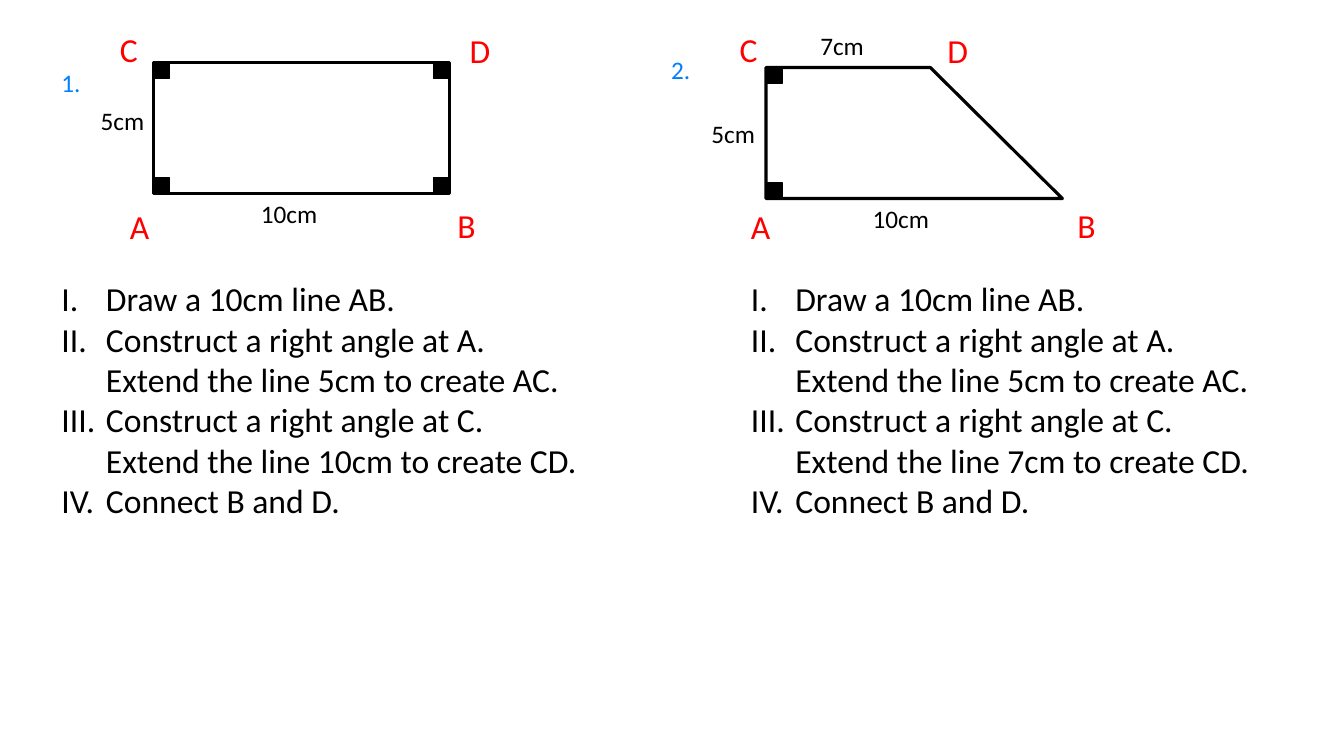
"""Build a slide comparing the construction steps of a rectangle and a trapezium."""
from dataclasses import dataclass

from lxml import etree
from pptx import Presentation
from pptx import util as u
from pptx.dml.color import RGBColor
from pptx.enum import shapes, text
from pptx.oxml.ns import qn

COLORS = {"ink": "000000", "letter": "FF0000", "number": "007FFF"}
FONT = "Calibri"
COLUMNS, ROWS = 160, 90
SLIDE_WIDTH, SLIDE_HEIGHT = u.Inches(13.33), u.Inches(7.5)
BASE, HEIGHT, CORNER = 35.28, 15.6, 1.92
LETTER_ROWS = {"A": 23.88, "B": 23.76, "C": 2.88, "D": 3}
LIST_TOP, LIST_HEIGHT = 32.52, 30.24
INDENT = u.Inches(0.44)


@dataclass(frozen=True)
class Label:
    text: str
    column: float
    row: float
    width: float
    height: float = 4.8
    size: int = 18
    color: str = "ink"


@dataclass(frozen=True)
class Construction:
    column: float
    row: float
    top_length: float
    corners: str
    labels: tuple[Label, ...]
    letter_columns: dict[str, float]
    list_column: float
    list_width: float
    top_side: str


CONSTRUCTIONS = (
    Construction(
        18.24, 7.44, BASE, "ABCD",
        (Label("1.", 6.12, 7.44, 4.8, color="number"),
         Label("5cm", 10.8, 12, 8.4),
         Label("10cm", 29.88, 23.04, 12.36)),
        {"A": 14.28, "B": 53.28, "C": 13.08, "D": 54.72},
        6.12, 64.08, "10cm"),
    Construction(
        91.2, 8.04, 19.56, "AC",
        (Label("2.", 78.72, 5.88, 4.8, color="number"),
         Label("5cm", 83.52, 13.44, 8.4),
         Label("10cm", 102.72, 23.64, 12.36),
         Label("7cm", 96.48, 3, 12.36)),
        {"A": 88.2, "B": 127.08, "C": 86.88, "D": 111.6},
        88.2, 62.88, "7cm"),
)


def across(columns: float) -> int:
    """Convert grid columns to a length."""
    return round(SLIDE_WIDTH * columns / COLUMNS)


def down(rows: float) -> int:
    """Convert grid rows to a length."""
    return round(SLIDE_HEIGHT * rows / ROWS)


def frame(column: float, row: float, width: float, height: float) -> tuple[int, int, int, int]:
    """Convert a grid rectangle to left, top, width and height."""
    return across(column), down(row), across(width), down(height)


def color(name: str) -> RGBColor:
    """Look up a named color."""
    return RGBColor.from_string(COLORS[name])


def style_runs(paragraph, size: int, color_name: str) -> None:
    """Set the font of every run in a paragraph."""
    for run in paragraph.runs:
        run.font.name = FONT
        run.font.size = u.Pt(size)
        run.font.color.rgb = color(color_name)


def style_shape(shape, line_width: float, filled: bool) -> None:
    """Give a shape a plain outline, with or without a fill."""
    shape.shadow.inherit = False
    if filled:
        shape.fill.solid()
        shape.fill.fore_color.rgb = color("ink")
    else:
        shape.fill.background()
    shape.line.color.rgb = color("ink")
    shape.line.width = u.Pt(line_width)


def add_label(slide, label: Label) -> None:
    """Add one short text label."""
    shape = slide.shapes.add_textbox(
        *frame(label.column, label.row, label.width, label.height))
    text_frame = shape.text_frame
    text_frame.word_wrap = True
    text_frame.auto_size = text.MSO_AUTO_SIZE.SHAPE_TO_FIT_TEXT
    text_frame.text = label.text
    style_runs(text_frame.paragraphs[0], label.size, label.color)


def add_figure(slide, item: Construction) -> None:
    """Draw the outline and its right-angle corners."""
    if item.top_length == BASE:
        outline = slide.shapes.add_shape(
            shapes.MSO_SHAPE.RECTANGLE, *frame(item.column, item.row, BASE, HEIGHT))
    else:
        left, top = across(item.column), down(item.row)
        bottom = top + down(HEIGHT)
        builder = slide.shapes.build_freeform(left, top)
        builder.add_line_segments(
            [(left + across(item.top_length), top),
             (left + across(BASE), bottom), (left, bottom)], close=True)
        outline = builder.convert_to_shape()
    style_shape(outline, 2.25, filled=False)
    for corner in item.corners:
        column = item.column + (BASE - CORNER if corner in "BD" else 0)
        row = item.row + (HEIGHT - CORNER if corner in "AB" else 0)
        square = slide.shapes.add_shape(
            shapes.MSO_SHAPE.RECTANGLE, *frame(column, row, CORNER, CORNER))
        style_shape(square, 1, filled=True)


def fill_steps(placeholder, item: Construction) -> None:
    """Write the numbered construction steps into a body placeholder."""
    (placeholder.left, placeholder.top, placeholder.width, placeholder.height) = frame(
        item.list_column, LIST_TOP, item.list_width, LIST_HEIGHT)
    text_frame = placeholder.text_frame
    text_frame.text = "\n".join((
        "Draw a 10cm line AB.",
        "Construct a right angle at A. Extend the line 5cm to create AC.",
        f"Construct a right angle at C. Extend the line {item.top_side} to create CD.",
        "Connect B and D.",
    ))
    text_frame.word_wrap = True
    text_frame.auto_size = text.MSO_AUTO_SIZE.SHAPE_TO_FIT_TEXT
    text_frame.vertical_anchor = text.MSO_ANCHOR.TOP
    for paragraph in text_frame.paragraphs:
        paragraph.space_before = paragraph.space_after = u.Pt(0)
        paragraph.alignment = text.PP_ALIGN.LEFT
        properties = paragraph._p.get_or_add_pPr()
        properties.set("marL", str(INDENT))
        properties.set("indent", str(-INDENT))
        etree.SubElement(properties, qn("a:buFont"), typeface="+mj-lt")
        etree.SubElement(properties, qn("a:buAutoNum"), type="romanUcPeriod")
        style_runs(paragraph, 24, "ink")


def main() -> None:
    """Create and save the presentation."""
    presentation = Presentation()
    presentation.slide_width, presentation.slide_height = SLIDE_WIDTH, SLIDE_HEIGHT
    slide = presentation.slides.add_slide(
        presentation.slide_layouts.get_by_name("Two Content"))
    title, *bodies = slide.placeholders
    title.element.getparent().remove(title.element)
    for body, item in zip(bodies, CONSTRUCTIONS):
        add_figure(slide, item)
        for label in item.labels:
            add_label(slide, label)
        for letter, column in item.letter_columns.items():
            add_label(slide, Label(letter, column, LETTER_ROWS[letter], 4.08, 6, 24, "letter"))
        fill_steps(body, item)
    presentation.save("out.pptx")


if __name__ == "__main__":
    main()
